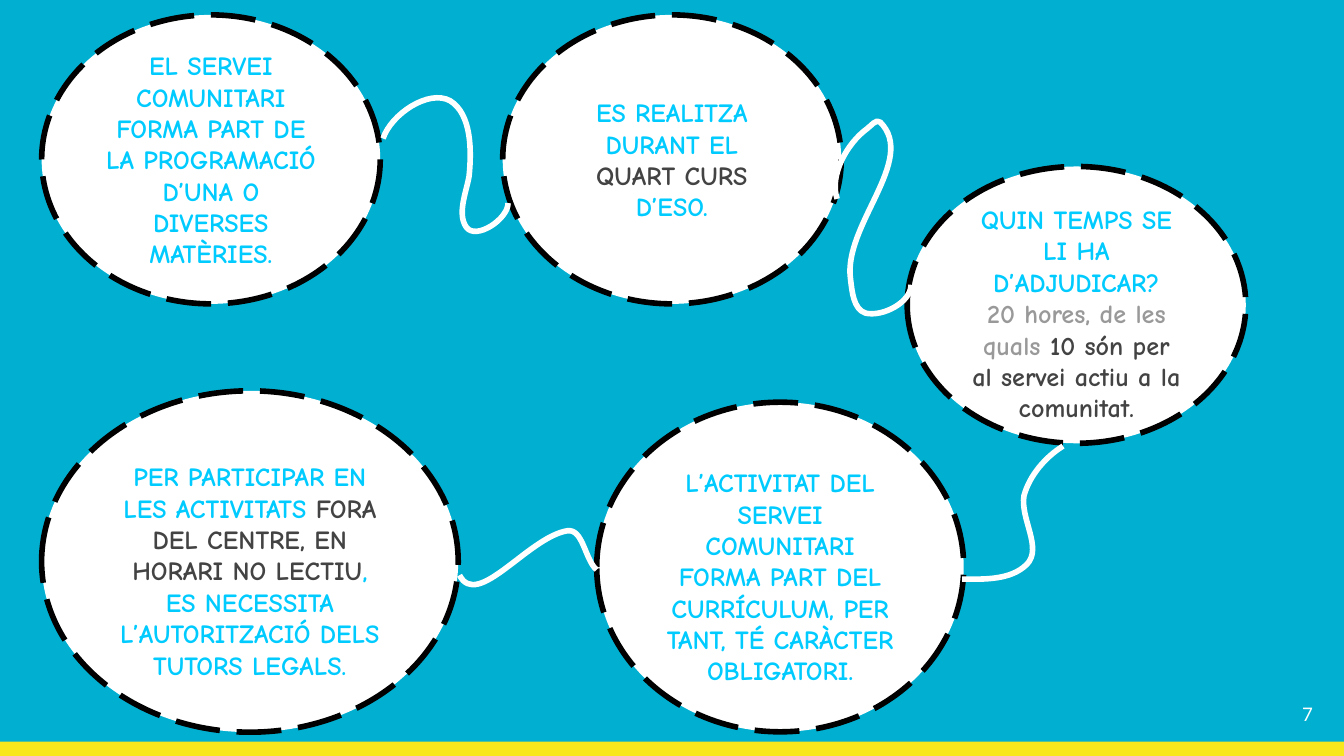
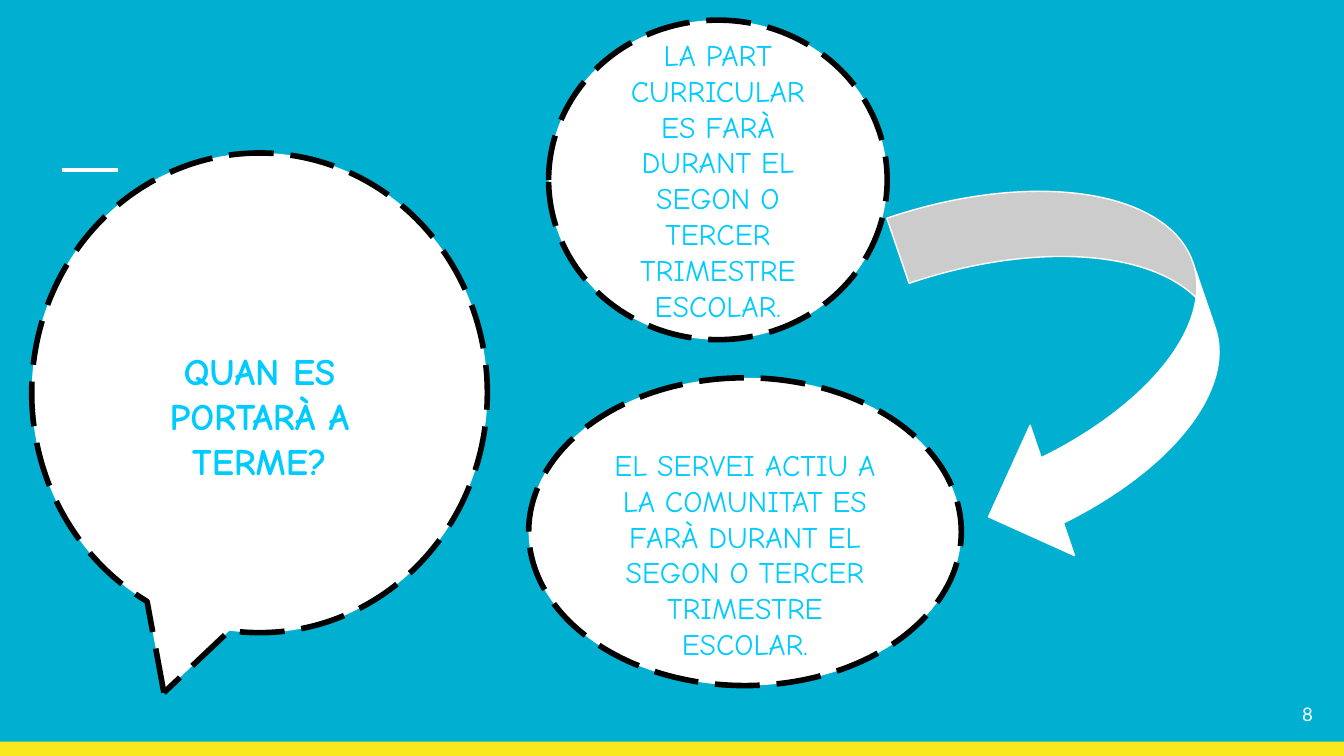
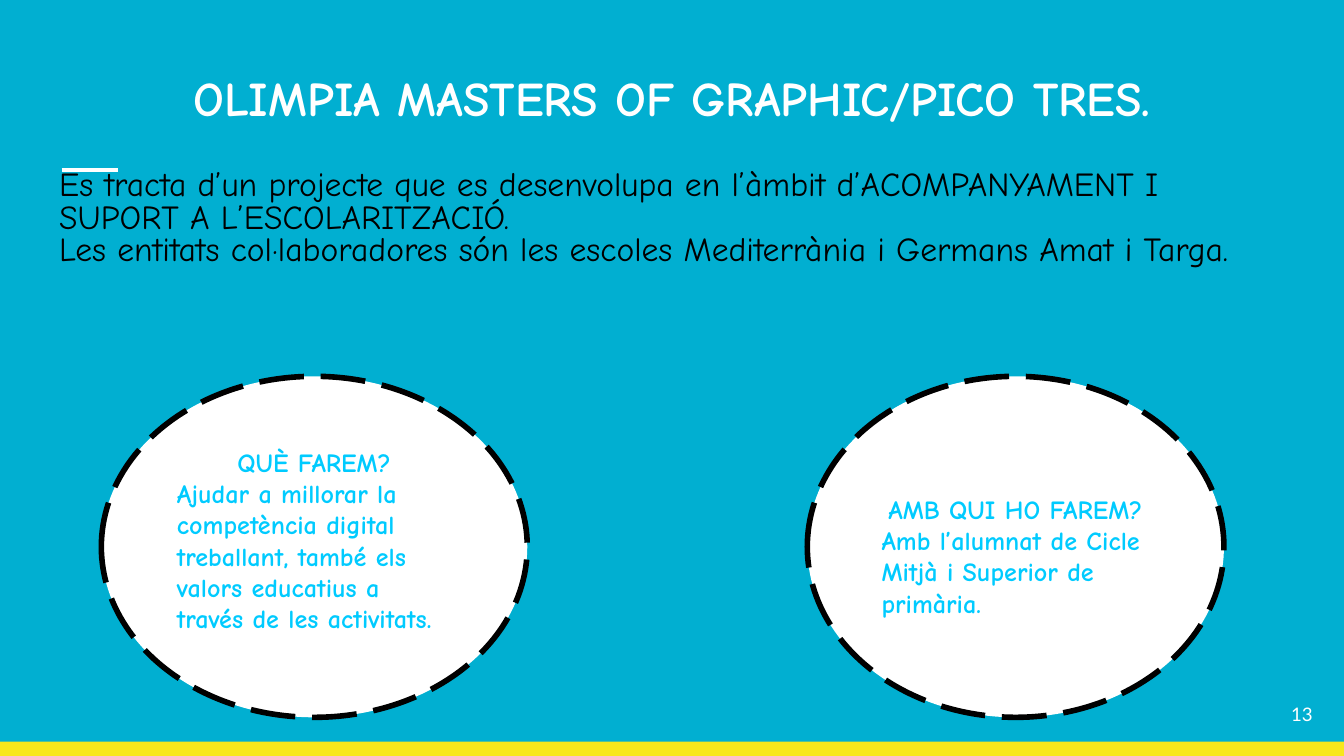
"""Build three slides about a school's community service."""
from dataclasses import dataclass

from lxml import etree
from pptx import Presentation
from pptx.dml.color import RGBColor
from pptx.enum.dml import MSO_LINE
from pptx.enum.shapes import MSO_CONNECTOR, MSO_SHAPE
from pptx.enum.text import MSO_ANCHOR, PP_ALIGN
from pptx.oxml.ns import qn
from pptx.util import Pt

ELLIPSE = MSO_SHAPE.OVAL
CALLOUT = MSO_SHAPE.OVAL_CALLOUT
CURVED_ARROW = MSO_SHAPE.CURVED_DOWN_ARROW
RECTANGLE = MSO_SHAPE.RECTANGLE
STRAIGHT = MSO_CONNECTOR.STRAIGHT
LONG_DASH = MSO_LINE.LONG_DASH
LEFT, CENTER, RIGHT = PP_ALIGN.LEFT, PP_ALIGN.CENTER, PP_ALIGN.RIGHT
TOP, MIDDLE = MSO_ANCHOR.TOP, MSO_ANCHOR.MIDDLE
TITLE_ONLY, BLANK = 5, 6
FIRST_MASTER_ID = 50


@dataclass(frozen=True)
class Theme:
    """Colours, fonts, type sizes and line widths of the deck, in points."""
    background: str = "01AFD1"
    band: str = "F8E71C"
    white: str = "FFFFFF"
    black: str = "000000"
    cyan: str = "00CBFF"
    dark: str = "434343"
    grey: str = "999999"
    font: str = "Comic Neue"
    number_font: str = "Lato"
    title: float = 25.9
    question: float = 20
    body: float = 18
    answer: float = 16
    note: float = 14
    number: float = 10
    outline: float = 3
    rule: float = 2.25
    hairline: float = 0.75
    inset: float = 7.2


T = Theme()


def rgb(color):
    """Turn a hex string into a colour."""
    return RGBColor.from_string(color)


def paint(sp, fill, line=None, width=0):
    """Give a shape a plain fill and outline without a shadow."""
    sp.shadow.inherit = False
    if fill:
        sp.fill.solid()
        sp.fill.fore_color.rgb = rgb(fill)
    else:
        sp.fill.background()
    if line:
        sp.line.color.rgb = rgb(line)
        sp.line.width = Pt(width)
    else:
        sp.line.fill.background()


def write(tf, paragraphs, size, bold=False, font=T.font, anchor=MIDDLE, shift=0):
    """Write (alignment, [(text, colour), ...]) paragraphs, moved down by shift."""
    tf.word_wrap = True
    tf.vertical_anchor = anchor
    tf.margin_left = tf.margin_right = Pt(T.inset)
    tf.margin_top = Pt(T.inset + 2 * max(shift, 0))
    tf.margin_bottom = Pt(T.inset + 2 * max(-shift, 0))
    for i, (align, runs) in enumerate(paragraphs):
        p = tf.paragraphs[0] if i == 0 else tf.add_paragraph()
        p.alignment = align
        for text, color in runs:
            r = p.add_run()
            r.text = text
            r.font.name = font
            r.font.size = Pt(size)
            r.font.bold = bold
            r.font.color.rgb = rgb(color)


def place(sp, box):
    """Move a shape to a box."""
    sp.left, sp.top, sp.width, sp.height = map(Pt, box)


def add_text(s, box, paragraphs, size, **style):
    """Add a text box and return its frame."""
    tf = s.shapes.add_textbox(*map(Pt, box)).text_frame
    write(tf, paragraphs, size, **style)
    return tf


def add_bubble(s, box, paragraphs, size=T.note, bold=True, shift=0, kind=ELLIPSE):
    """Add a white bubble with a dashed outline and text."""
    sp = s.shapes.add_shape(kind, *map(Pt, box))
    paint(sp, T.white, T.black, T.outline)
    sp.line.dash_style = LONG_DASH
    write(sp.text_frame, paragraphs, size, bold, shift=shift)
    return sp


def add_thread(s, box, points):
    """Draw a white thread of chained cubic curves, with points relative to its box."""
    points = [(Pt(x), Pt(y)) for x, y in points]
    builder = s.shapes.build_freeform(*points[0])
    builder.add_line_segments(points[1:], close=False)
    sp = builder.convert_to_shape()
    paint(sp, None, T.white, T.outline)
    place(sp, box)
    outline = sp._element.find(".//" + qn("a:path"))
    outline.set("w", str(sp.width))
    outline.set("h", str(sp.height))
    for pt, (x, y) in zip(list(outline.iter(qn("a:pt"))), points):
        pt.set("x", str(x))
        pt.set("y", str(y))
    segments = outline.findall(qn("a:lnTo"))
    for i in range(0, len(segments), 3):
        curve = etree.SubElement(outline, qn("a:cubicBezTo"))
        for segment in segments[i:i + 3]:
            curve.append(segment[0])
            outline.remove(segment)


def dress_master(prs, s):
    """Set the master's background and move a band and rule drawn on s into it."""
    master = prs.slide_master
    master.background.fill.solid()
    master.background.fill.fore_color.rgb = rgb(T.background)
    band = s.shapes.add_shape(RECTANGLE, 0, Pt(397.4), Pt(720), Pt(7.6))
    paint(band, T.band)
    rule = s.shapes.add_connector(STRAIGHT, Pt(33.1), Pt(91), Pt(63.4), Pt(91))
    rule.line.color.rgb = rgb(T.white)
    rule.line.width = Pt(T.rule)
    etree.SubElement(rule._element.spPr, qn("a:effectLst"))
    for i, part in enumerate((band, rule), FIRST_MASTER_ID):
        part._element.xpath(".//p:cNvPr")[0].set("id", str(i))
        master.shapes._spTree.append(part._element)


def new_slide(prs, layout, number):
    """Add a slide with its number, dressing the master on first use."""
    s = prs.slides.add_slide(prs.slide_layouts[layout])
    if len(prs.slides) == 1:
        dress_master(prs, s)
    add_text(s, (667.2, 367.2, 43.2, 31), [(RIGHT, [(number, T.white)])],
             T.number, font=T.number_font)
    return s


def conditions_slide(prs):
    """Build the chain of five conditions of the service."""
    s = new_slide(prs, BLANK, "7")
    bubbles = [
        ((269.3, 8, 181.4, 154.8), 0, [
            [("ES REALITZA DURANT EL ", T.cyan), ("QUART CURS", T.dark),
             (" D’ESO.", T.cyan)]]),
        ((486, 89.2, 181.4, 148.3), 4.5, [
            [("QUIN TEMPS SE LI HA D’ADJUDICAR?", T.cyan)],
            [("20 hores, de les quals ", T.grey),
             ("10 són per al servei actiu a la comunitat.", T.dark)]]),
        ((319.7, 215.5, 196.6, 176.6), 5, [
            [("L’ACTIVITAT DEL SERVEI COMUNITARI FORMA PART DEL CURRÍCULUM, "
              "PER TANT, TÉ CARÀCTER OBLIGATORI.", T.cyan)]]),
        ((22.3, 8, 181.4, 154.8), 0, [
            [("EL SERVEI COMUNITARI FORMA PART DE LA PROGRAMACIÓ D’UNA O "
              "DIVERSES MATÈRIES.", T.cyan)]]),
        ((22.3, 209.4, 223.2, 182.9), 4.8, [
            [("PER PARTICIPAR EN LES ACTIVITATS ", T.cyan),
             ("FORA DEL CENTRE, EN HORARI NO LECTIU", T.dark),
             (", ES NECESSITA L’AUTORITZACIÓ DELS TUTORS LEGALS.", T.cyan)]]),
    ]
    for box, shift, lines in bubbles:
        add_bubble(s, box, [(CENTER, runs) for runs in lines], shift=shift)
    threads = [
        ((205.2, 52.6, 66.2, 71.3), [
            (0, 21.6), (4.3, 8.6), (24.5, -5), (36, 1.4), (47.5, 8.6),
            (47.5, 28.1), (46.1, 41.8), (44.6, 50.4), (39.6, 61.9),
            (44.6, 69.1), (49.7, 76.3), (67, 64.8), (67, 56.2)]),
        ((447.1, 64.8, 41, 103.7), [
            (1.4, 41.8), (-2.9, 29.5), (6.5, 12.2), (17.3, 4.3), (19.4, 2.9),
            (22.3, -1.4), (24.5, 0.7), (44.6, 20.9), (4.3, 56.2), (8.6, 85),
            (9.4, 91.4), (10.1, 100.8), (16.6, 103), (25.9, 105.1),
            (41, 97.2), (41, 87.8)]),
        ((515.5, 239, 54.7, 71.3), [
            (54, 0), (44.6, 5.8), (36, 15.8), (33.1, 26.6), (31, 38.9),
            (43.2, 54.7), (34.6, 63.4), (25.9, 72), (11.5, 71.3), (0, 71.3)]),
        ((246.2, 284.4, 73.4, 28.8), [
            (73.4, 20.9), (67, 15.1), (66.2, -1.4), (57.6, 0), (36.7, 3.6),
            (9.4, 42.5), (0, 23.8)]),
    ]
    for box, points in threads:
        add_thread(s, box, points)


def calendar_slide(prs):
    """Build the question about dates with its two answers."""
    s = new_slide(prs, BLANK, "8")
    question = add_bubble(
        s, (17, 82, 244.1, 257), [(CENTER, [("QUAN ES PORTARÀ A TERME?", T.cyan)])],
        T.question, shift=12, kind=CALLOUT)
    question.adjustments[0] = -0.21
    question.adjustments[1] = 0.625
    answers = [
        ((293.9, 10.8, 181.4, 171.2), 0, "LA PART CURRICULAR ES FARÀ"),
        ((283.2, 202.4, 231.8, 164.9), 12, "EL SERVEI ACTIU A LA COMUNITAT ES FARÀ"),
    ]
    for box, shift, subject in answers:
        text = subject + " DURANT EL SEGON O TERCER TRIMESTRE ESCOLAR."
        add_bubble(s, box, [(CENTER, [(text, T.cyan)])], T.answer, False, shift)
    arrow = s.shapes.add_shape(CURVED_ARROW, *map(Pt, (475.2, 116.8, 205.9, 147.6)))
    arrow.rotation = 71.2
    paint(arrow, T.white, T.white, T.hairline)


def project_slide(prs):
    """Build the project slide with its title, summary and two bubbles."""
    s = new_slide(prs, TITLE_ONLY, "13")
    title = s.shapes.title
    place(title, (24.5, 29.5, 671, 51.1))
    write(title.text_frame,
          [(CENTER, [("OLIMPIA MASTERS OF GRAPHIC/PICO TRES.", T.white)])],
          T.title, True, anchor=TOP)
    summary = [
        "Es tracta d’un projecte que es desenvolupa en l’àmbit d’ACOMPANYAMENT I "
        "SUPORT A L’ESCOLARITZACIÓ.",
        "Les entitats col·laboradores són les escoles Mediterrània i Germans Amat "
        "i Targa.",
    ]
    tf = add_text(s, (24.6, 84.5, 671, 89.3),
                  [(LEFT, [(text, T.black)]) for text in summary], T.body, anchor=TOP)
    for p in tf.paragraphs:
        p.line_spacing = 0.8
    details = [
        ((54.3, 201.6, 228.2, 182.7), -3.6, "QUÈ FAREM?",
         "Ajudar a millorar la competència digital treballant, també els valors "
         "educatius a través de les activitats."),
        ((432.5, 201.6, 223.2, 182.7), 4.8, "AMB QUI HO FAREM?",
         "Amb l’alumnat de Cicle Mitjà i Superior de primària."),
    ]
    for box, shift, question, answer in details:
        add_bubble(s, box, [(CENTER, [(question, T.cyan)]),
                            (LEFT, [(answer, T.cyan)])], shift=shift)


def main():
    """Build and save the deck."""
    prs = Presentation()
    prs.slide_width, prs.slide_height = Pt(720), Pt(405)
    conditions_slide(prs)
    calendar_slide(prs)
    project_slide(prs)
    prs.save("out.pptx")


if __name__ == "__main__":
    main()
